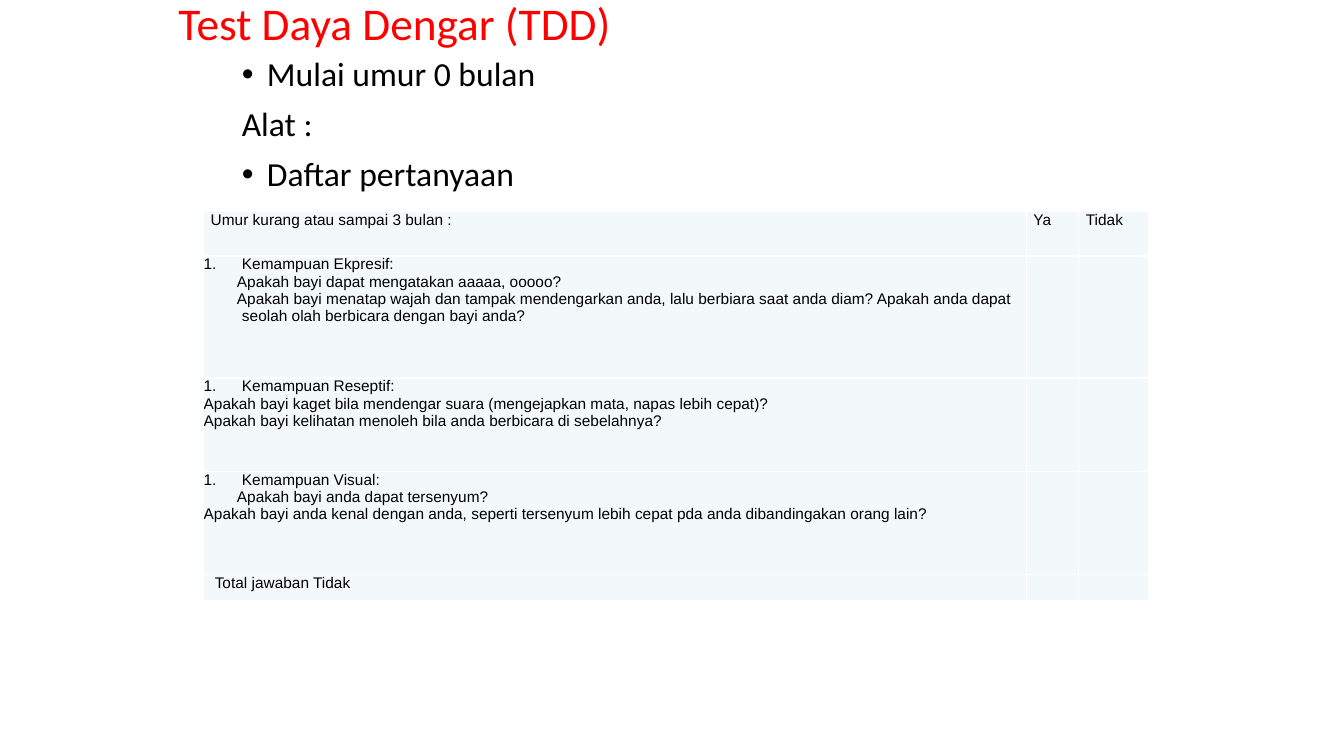
from dataclasses import dataclass

from lxml.etree import SubElement
from pptx import Presentation
from pptx.dml.color import RGBColor
from pptx.enum.text import MSO_ANCHOR, MSO_AUTO_SIZE, PP_ALIGN
from pptx.oxml.ns import qn
from pptx.util import Inches, Pt


@dataclass(frozen=True)
class Theme:
    red: str = "FF0000"
    black: str = "000000"
    cell: str = "F3F9FA"
    border: str = "FFFFFF"
    heading_font: str = "Calibri"
    table_font: str = "Arial"
    title_size: float = 32.4
    body_size: float = 24
    table_size: float = 11


theme = Theme()


def add_span(para, text, font, size, color):
    span = para.add_run()
    span.text = text
    span.font.name = font
    span.font.size = Pt(size)
    span.font.color.rgb = RGBColor.from_string(color)


def set_indent(para, left, first, bullet=None):
    props = para._p.get_or_add_pPr()
    props.set("marL", str(Inches(left)))
    props.set("indent", str(Inches(first)))
    if bullet == "•":
        SubElement(props, qn("a:buFont"), typeface="Arial")
        SubElement(props, qn("a:buChar"), char=bullet)
    elif bullet == "1.":
        SubElement(props, qn("a:buFont"), typeface="+mj-lt")
        SubElement(props, qn("a:buAutoNum"), type="arabicPeriod")
    else:
        SubElement(props, qn("a:buNone"))


deck = Presentation()
deck.slide_width, deck.slide_height = Inches(13.33), Inches(7.5)
page = deck.slides.add_slide(deck.slide_layouts[5])

# Title
title = page.shapes.title
title.left, title.top = Inches(1.67), Inches(0)
title.width, title.height = Inches(9), Inches(0.52)
title.text_frame.auto_size = MSO_AUTO_SIZE.NONE
title.text_frame.vertical_anchor = MSO_ANCHOR.MIDDLE
para = title.text_frame.paragraphs[0]
para.alignment = PP_ALIGN.LEFT
para.line_spacing = 0.9
add_span(para, "Test Daya Dengar (TDD)", theme.heading_font, theme.title_size, theme.red)

# Introduction
intro = page.shapes.add_textbox(Inches(2.3), Inches(0.52), Inches(9.37), Inches(6.38))
intro.text_frame.word_wrap = True
intro_lines = [("Mulai umur 0 bulan", "•"), ("Alat :", None), ("Daftar pertanyaan", "•")]
for index, (text, bullet) in enumerate(intro_lines):
    para = intro.text_frame.add_paragraph() if index else intro.text_frame.paragraphs[0]
    para.line_spacing = 0.9
    para.space_before = Pt(10)
    set_indent(para, 0.25, -0.25, bullet)
    add_span(para, text, theme.heading_font, theme.body_size, theme.black)

# Questions: each line is text, left indent, first-line indent, bullet
PLAIN = (0.07, 0, None)
NUMBERED = (0.38, -0.38, "1.")
HANGING = (0.38, -0.38, None)
INSET = (0.38, -0.05, None)
TOTAL = (0.31, -0.2, None)
rows = [
    (0.44, [[("Umur kurang atau sampai 3 bulan :", PLAIN)], [("Ya", PLAIN)], [("Tidak", PLAIN)]]),
    (1.21, [[
        ("Kemampuan Ekpresif:", NUMBERED),
        ("Apakah bayi dapat mengatakan aaaaa, ooooo?", INSET),
        ("Apakah bayi menatap wajah dan tampak mendengarkan anda, lalu berbiara saat anda diam? "
         "Apakah anda dapat seolah olah berbicara dengan bayi anda?", INSET),
    ], [], []]),
    (0.93, [[
        ("Kemampuan Reseptif:", NUMBERED),
        ("Apakah bayi kaget bila mendengar suara (mengejapkan mata, napas lebih cepat)?", HANGING),
        ("Apakah bayi kelihatan menoleh bila anda berbicara di sebelahnya?", HANGING),
    ], [], []]),
    (1.02, [[
        ("Kemampuan Visual:", NUMBERED),
        ("Apakah bayi anda dapat tersenyum?", INSET),
        ("Apakah bayi anda kenal dengan anda, seperti tersenyum lebih cepat pda anda "
         "dibandingakan orang lain?", HANGING),
    ], [], []]),
    (0.26, [[("Total jawaban Tidak", TOTAL)], [], []]),
]
column_widths = [8.16, 0.52, 0.69]

# Table
table = page.shapes.add_table(
    len(rows), len(column_widths), Inches(2.02), Inches(2.1), Inches(9.37), Inches(3.86)
).table
table.first_row = table.horz_banding = False
for column, width in zip(table.columns, column_widths):
    column.width = Inches(width)
for row, (height, contents) in zip(table.rows, rows):
    row.height = Inches(height)
    for cell, lines in zip(row.cells, contents):
        cell.margin_left = cell.margin_right = cell.margin_top = cell.margin_bottom = 0
        cell_props = cell._tc.get_or_add_tcPr()
        for side in ("lnL", "lnR", "lnT", "lnB"):
            line = SubElement(cell_props, qn(f"a:{side}"), w=str(Pt(1)))
            SubElement(SubElement(line, qn("a:solidFill")), qn("a:srgbClr"), val=theme.border)
        cell.fill.solid()
        cell.fill.fore_color.rgb = RGBColor.from_string(theme.cell)
        frame = cell.text_frame
        for index, (text, indent) in enumerate(lines):
            para = frame.add_paragraph() if index else frame.paragraphs[0]
            set_indent(para, *indent)
            add_span(para, text, theme.table_font, theme.table_size, theme.black)
        if not lines:
            # Small type keeps empty cells from stretching their row
            SubElement(frame.paragraphs[0]._p, qn("a:endParaRPr"), sz=str(theme.table_size * 100))

deck.save("out.pptx")
